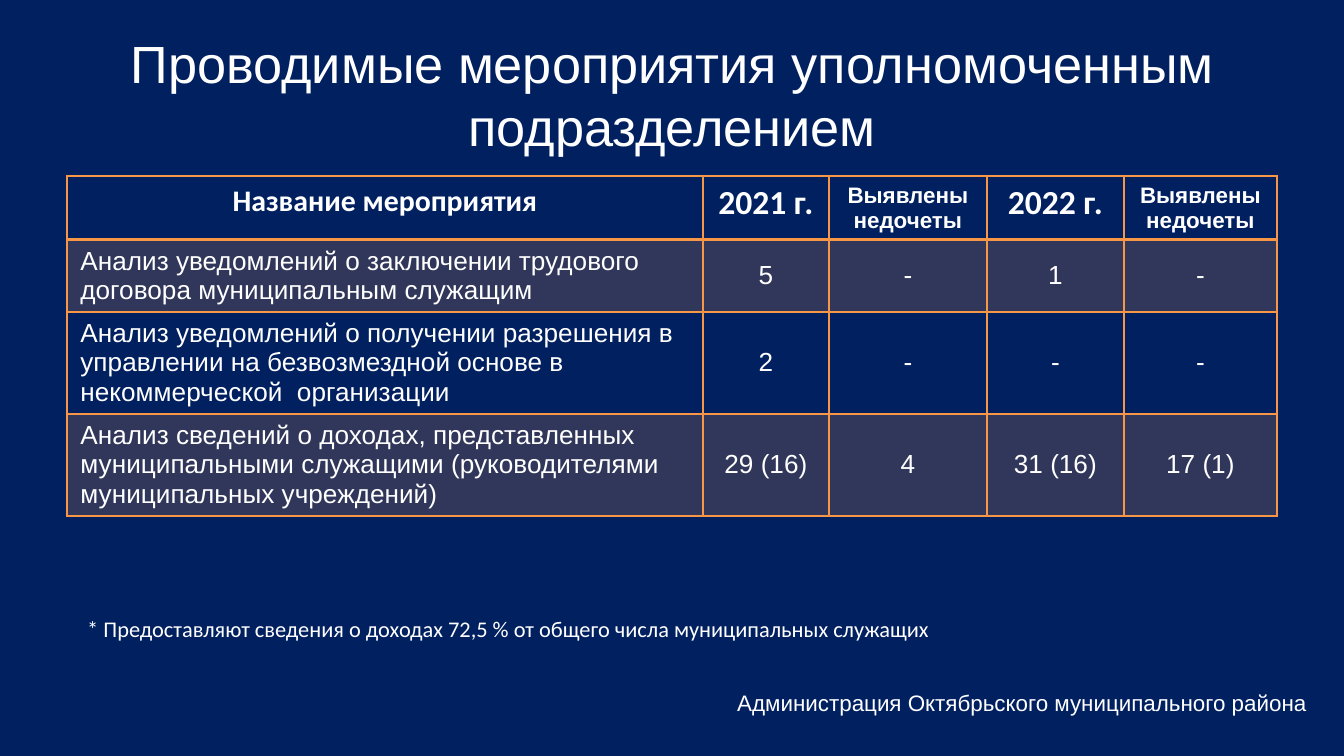
from dataclasses import dataclass

from lxml.etree import SubElement
from pptx import Presentation
from pptx.dml.color import RGBColor
from pptx.enum.text import MSO_ANCHOR, MSO_AUTO_SIZE, PP_ALIGN
from pptx.oxml.ns import qn
from pptx.slide import Slide
from pptx.table import _Cell as Cell
from pptx.text.text import TextFrame
from pptx.util import Emu, Pt

EMU_PER_PX = 914400 / 134.4


@dataclass(frozen=True)
class Theme:
    background: str = "002060"
    text: str = "FFFFFF"
    accent: str = "F79646"
    band_opacity: int = 20
    heading_font: str = "Calibri"
    body_font: str = "Arial"
    title_size: int = 28
    year_size: int = 18
    heading_size: int = 16
    body_size: int = 14
    small_size: int = 12
    line: int = 1
    header_line: int = 2


THEME = Theme()


@dataclass(frozen=True)
class Box:
    left: int
    top: int
    width: int
    height: int

    def emu(self) -> tuple[Emu, Emu, Emu, Emu]:
        return px(self.left), px(self.top), px(self.width), px(self.height)


@dataclass(frozen=True)
class Heading:
    text: str
    width: int
    size: int
    font: str


@dataclass(frozen=True)
class Note:
    text: str
    box: Box
    font: str


HEADINGS = (
    Heading("Название мероприятия", 636, THEME.heading_size, THEME.heading_font),
    Heading("2021 г.", 126, THEME.year_size, THEME.heading_font),
    Heading("Выявлены недочеты", 158, THEME.small_size, THEME.body_font),
    Heading("2022 г.", 137, THEME.year_size, THEME.heading_font),
    Heading("Выявлены недочеты", 153, THEME.small_size, THEME.body_font),
)
ACTIVITIES = (
    ("Анализ уведомлений о заключении трудового договора муниципальным служащим",
     "5", "-", "1", "-"),
    ("Анализ уведомлений о получении разрешения в управлении на безвозмездной "
     "основе в некоммерческой  организации", "2", "-", "-", "-"),
    ("Анализ сведений о доходах, представленных муниципальными служащими "
     "(руководителями муниципальных учреждений)", "29 (16)", "4", "31 (16)", "17 (1)"),
)
ROW_HEIGHTS = (63, 72, 102, 102)
NOTES = (
    Note("Администрация Октябрьского муниципального района",
         Box(724, 683, 598, 41), THEME.body_font),
    Note("* Предоставляют сведения о доходах 72,5 % от общего числа муниципальных служащих",
         Box(74, 609, 892, 41), THEME.heading_font),
)


def px(length: int) -> Emu:
    return Emu(round(length * EMU_PER_PX))


def write(frame: TextFrame, text: str, *, size: int, font: str = THEME.body_font,
          bold: bool = False, align: PP_ALIGN = PP_ALIGN.LEFT) -> None:
    paragraph = frame.paragraphs[0]
    paragraph.alignment = align
    run = paragraph.add_run()
    run.text = text
    run.font.size = Pt(size)
    run.font.name = font
    run.font.bold = bold
    run.font.color.rgb = RGBColor.from_string(THEME.text)


def set_borders(cell: Cell, bottom: int, top: int) -> None:
    """Outline the cell; the lines must precede the fill in its properties."""
    properties = cell._tc.get_or_add_tcPr()
    widths = {"lnL": THEME.line, "lnR": THEME.line, "lnT": top, "lnB": bottom}
    for side, width in widths.items():
        line = SubElement(properties, qn(f"a:{side}"), w=str(Pt(width)))
        fill = SubElement(line, qn("a:solidFill"))
        SubElement(fill, qn("a:srgbClr"), val=THEME.accent)


def set_fill(cell: Cell, banded: bool) -> None:
    if not banded:
        cell.fill.background()
        return
    cell.fill.solid()
    cell.fill.fore_color.rgb = RGBColor.from_string(THEME.accent)
    color = cell._tc.tcPr.find(f"{qn('a:solidFill')}/{qn('a:srgbClr')}")
    SubElement(color, qn("a:alpha"), val=str(THEME.band_opacity * 1000))


def add_title(slide: Slide, text: str, box: Box) -> None:
    title = slide.shapes.title
    title.left, title.top, title.width, title.height = box.emu()
    frame = title.text_frame
    frame.word_wrap = True
    frame.auto_size = MSO_AUTO_SIZE.NONE
    frame.vertical_anchor = MSO_ANCHOR.MIDDLE
    write(frame, text, size=THEME.title_size, align=PP_ALIGN.CENTER)


def add_activity_table(slide: Slide, left: int, top: int) -> None:
    box = Box(left, top, sum(heading.width for heading in HEADINGS), sum(ROW_HEIGHTS))
    table = slide.shapes.add_table(len(ROW_HEIGHTS), len(HEADINGS), *box.emu()).table
    for column, heading in zip(table.columns, HEADINGS):
        column.width = px(heading.width)
    for row, height in zip(table.rows, ROW_HEIGHTS):
        row.height = px(height)

    for column, heading in enumerate(HEADINGS):
        cell = table.cell(0, column)
        set_borders(cell, bottom=THEME.header_line, top=THEME.line)
        set_fill(cell, banded=False)
        write(cell.text_frame, heading.text, size=heading.size, font=heading.font,
              bold=True, align=PP_ALIGN.CENTER)

    for row, activity in enumerate(ACTIVITIES, start=1):
        for column, text in enumerate(activity):
            cell = table.cell(row, column)
            set_borders(cell, bottom=THEME.line,
                        top=THEME.header_line if row == 1 else THEME.line)
            set_fill(cell, banded=row % 2 == 1)
            is_name = column == 0
            cell.vertical_anchor = MSO_ANCHOR.TOP if is_name else MSO_ANCHOR.MIDDLE
            write(cell.text_frame, text, size=THEME.body_size,
                  align=PP_ALIGN.LEFT if is_name else PP_ALIGN.CENTER)


def add_note(slide: Slide, note: Note) -> None:
    frame = slide.shapes.add_textbox(*note.box.emu()).text_frame
    frame.word_wrap = True
    frame.auto_size = MSO_AUTO_SIZE.SHAPE_TO_FIT_TEXT
    write(frame, note.text, size=THEME.small_size, font=note.font)


def main() -> None:
    presentation = Presentation()
    presentation.slide_width, presentation.slide_height = px(1344), px(756)
    slide = presentation.slides.add_slide(presentation.slide_layouts.get_by_name("Title Only"))
    slide.background.fill.solid()
    slide.background.fill.fore_color.rgb = RGBColor.from_string(THEME.background)

    add_title(slide, "Проводимые мероприятия уполномоченным подразделением",
              Box(67, 31, 1210, 126))
    add_activity_table(slide, left=67, top=176)
    for note in NOTES:
        add_note(slide, note)
    presentation.save("out.pptx")


if __name__ == "__main__":
    main()
